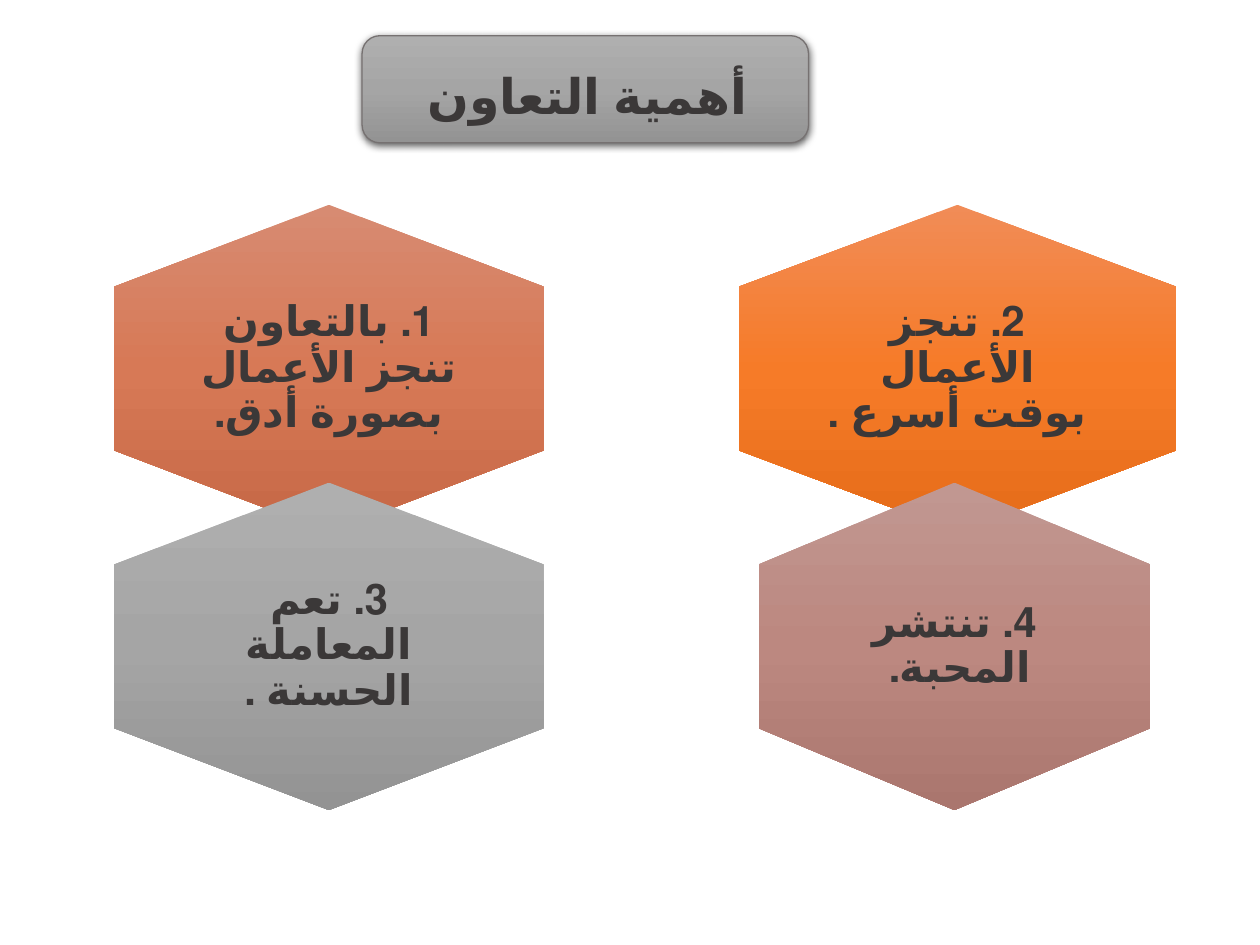
"""Build the slide on why cooperation matters."""
from copy import deepcopy
from dataclasses import dataclass

from lxml.etree import SubElement as Sub
from pptx import Presentation
from pptx.dml.color import RGBColor as RGB
from pptx.enum.lang import MSO_LANGUAGE_ID as Lang
from pptx.enum.shapes import MSO_SHAPE as Kind
from pptx.enum.text import MSO_ANCHOR as Anchor, PP_ALIGN as Align
from pptx.oxml.ns import qn
from pptx.util import Cm, Pt

INK = RGB(0x3B, 0x38, 0x38)
EDGE = RGB(0x76, 0x71, 0x71)
GREY = RGB(0xAF, 0xAF, 0xAF), RGB(0xA5, 0xA5, 0xA5), RGB(0x93, 0x93, 0x93)
ORANGE = RGB(0xF1, 0x8C, 0x57), RGB(0xF6, 0x7B, 0x28), RGB(0xE5, 0x6C, 0x19)
RUST = RGB(0xD7, 0x8B, 0x72), RGB(0xD7, 0x79, 0x56), RGB(0xC6, 0x68, 0x46)
ROSE = RGB(0xC1, 0x97, 0x91), RGB(0xBC, 0x88, 0x80), RGB(0xAA, 0x76, 0x6E)

LEFT, RIGHT = 6.63, 19.3
UPPER, LOWER = 7.43, 13.03
HIGH, TALL = 6.6, 4.42
BADGE = Cm(7.3), Cm(0.72), Cm(9), Cm(2.16)
FONT = {"name": "Calibri", "bold": True, "language_id": Lang.ARABIC}


@dataclass
class Point:
    text: str
    x: float
    y: float
    wide: float
    tones: tuple
    pad: float


POINTS = [
    Point("2. تنجز الأعمال بوقت أسرع . ", RIGHT, UPPER, 8.81, ORANGE, 0.25),
    Point("1. بالتعاون تنجز الأعمال بصورة أدق.", LEFT, UPPER, 8.66, RUST, 0),
    Point("4. تنتشر المحبة. ", RIGHT - 0.06, LOWER, 7.9, ROSE, 0.25),
    Point("3. تعم المعاملة الحسنة .", LEFT, LOWER, 8.66, GREY, 0),
]


def apply(item, values: dict) -> None:
    for key, value in values.items():
        setattr(item, key, value)


def shade(shape, tones: tuple) -> None:
    fill = shape.fill
    fill.gradient()
    fill.gradient_angle = 270
    grad = shape.element.spPr.find(qn("a:gradFill"))
    grad.set("rotWithShape", "0")
    stops = grad.find(qn("a:gsLst"))
    stops.insert(1, deepcopy(stops[0]))
    for stop, tone, place in zip(fill.gradient_stops, tones, (0, 0.5, 1)):
        stop.color.rgb = tone
        stop.position = place


def write(para, text: str, size: float) -> None:
    run = para.add_run()
    run.text = text
    apply(run.font, FONT | {"size": Pt(size)})
    run.font.color.rgb = INK


def frame(shape, pad: float):
    body = shape.text_frame
    sides = ("left", "right", "top", "bottom")
    apply(body, {f"margin_{side}": Cm(pad) for side in sides})
    apply(body, {"word_wrap": True, "vertical_anchor": Anchor.MIDDLE})
    para = body.paragraphs[0]
    para.alignment = Align.CENTER
    return para


def box(x: float, y: float, wide: float, high: float) -> tuple:
    return Cm(x - wide / 2), Cm(y - high / 2), Cm(wide), Cm(high)


def draw_point(shapes, point: Point) -> None:
    hexa = shapes.add_shape(Kind.HEXAGON, *box(point.x, point.y, HIGH, point.wide))
    hexa.rotation = 90
    hexa.adjustments[0] = 0.25
    hexa.shadow.inherit = False
    hexa.line.fill.background()
    shade(hexa, point.tones)
    label = shapes.add_textbox(*box(point.x, point.y, point.wide * 2 / 3, TALL))
    para = frame(label, point.pad)
    para.line_spacing = 0.9
    para._p.get_or_add_pPr().set("rtl", "1")
    write(para, point.text, 24)


def draw_title(shapes) -> None:
    badge = shapes.add_shape(Kind.ROUNDED_RECTANGLE, *BADGE)
    shade(badge, GREY)
    badge.line.color.rgb = EDGE
    badge.line.width = Pt(0.75)
    glow = {"blurRad": Pt(4.5), "dist": Pt(1.5), "dir": 5400000, "rotWithShape": 0}
    effect = Sub(badge.element.spPr, qn("a:effectLst"))
    drop = Sub(effect, qn("a:outerShdw"), {k: str(int(v)) for k, v in glow.items()})
    tone = Sub(drop, qn("a:srgbClr"), val="000000")
    Sub(tone, qn("a:alpha"), val="63000")
    title = shapes.title
    apply(title, dict(zip(("left", "top", "width", "height"), BADGE)))
    badge.element.addnext(title.element)
    para = frame(title, 0.13)
    write(para, " ", 36)
    write(para, "أهمية التعاون ", 28)


def main() -> None:
    deck = Presentation()
    apply(deck, {"slide_width": Cm(25.4), "slide_height": Cm(19.05)})
    shapes = deck.slides.add_slide(deck.slide_layouts[5]).shapes
    draw_title(shapes)
    for point in POINTS:
        draw_point(shapes, point)
    deck.save("out.pptx")


if __name__ == "__main__":
    main()
